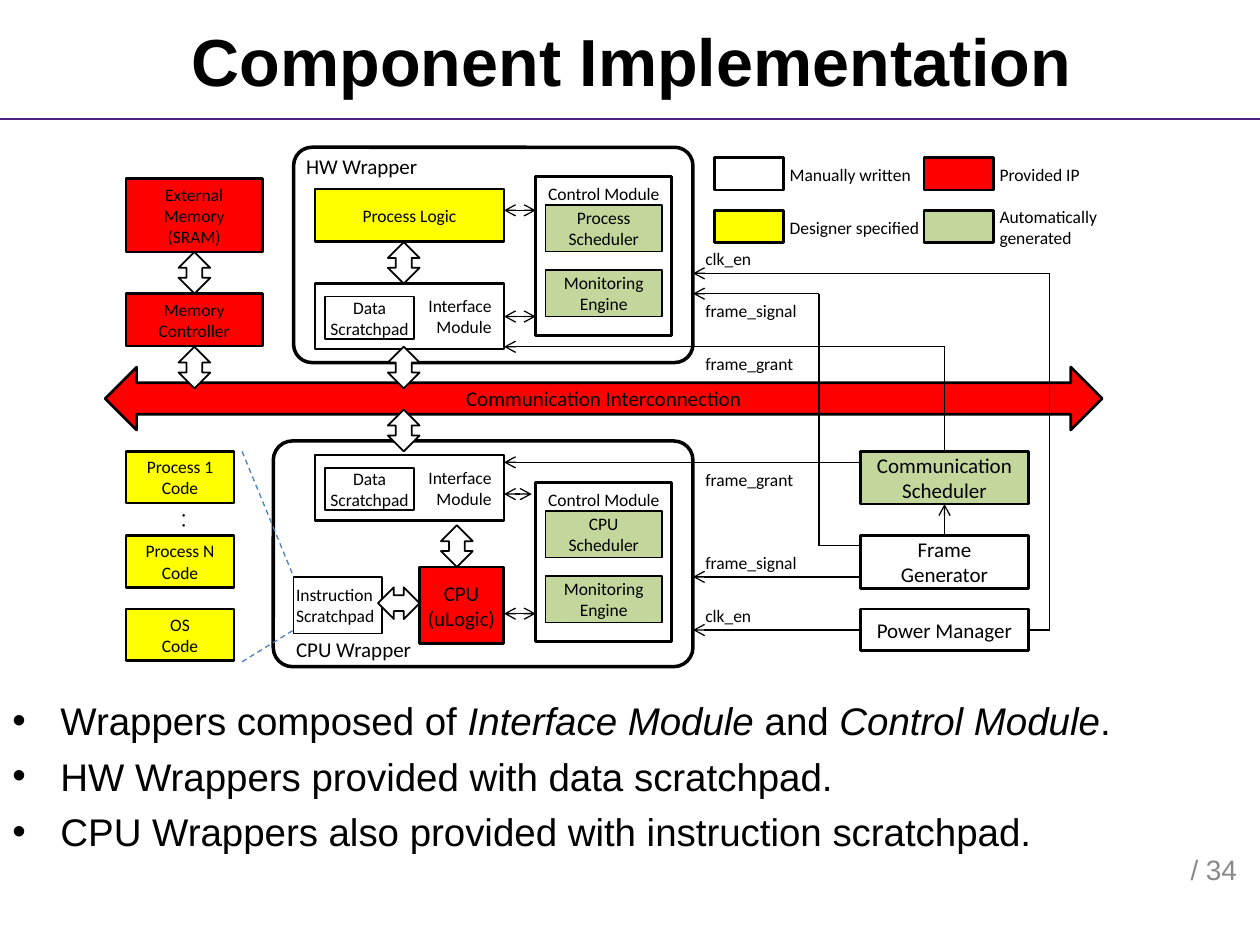
from lxml import etree
from pptx import Presentation
from pptx.dml.color import RGBColor
from pptx.enum.dml import MSO_LINE
from pptx.enum.shapes import MSO_CONNECTOR, MSO_SHAPE
from pptx.enum.text import MSO_ANCHOR, PP_ALIGN
from pptx.oxml.ns import qn
from pptx.util import Cm, Pt

RECT, ROUNDED = MSO_SHAPE.RECTANGLE, MSO_SHAPE.ROUNDED_RECTANGLE
UP_DOWN, LEFT_RIGHT = MSO_SHAPE.UP_DOWN_ARROW, MSO_SHAPE.LEFT_RIGHT_ARROW
LEFT, CENTER, RIGHT = PP_ALIGN.LEFT, PP_ALIGN.CENTER, PP_ALIGN.RIGHT
TOP, MIDDLE, BOTTOM = MSO_ANCHOR.TOP, MSO_ANCHOR.MIDDLE, MSO_ANCHOR.BOTTOM
SIDE_TOP, SIDE_LEFT, SIDE_BOTTOM, SIDE_RIGHT = range(4)
STRAIGHT, DASH = MSO_CONNECTOR.STRAIGHT, MSO_LINE.DASH

COLORS = {
    "ink": "000000", "manual": "FFFFFF", "provided": "FF0000",
    "designer": "FFFF00", "generated": "C3D69B",
    "rule": "4A2384", "dashed": "4B7EBC", "footer": "898989",
}
SMALL, MEDIUM = 10, 12


def rgb(name):
    return RGBColor.from_string(COLORS[name])


def write(frame, text, size, align=LEFT, anchor=TOP, font="Calibri",
          color="ink", bold=False, insets=(0.25, 0.13, 0.25, 0.13)):
    frame.text = text
    frame.word_wrap = True
    frame.vertical_anchor = anchor
    (frame.margin_left, frame.margin_top,
     frame.margin_right, frame.margin_bottom) = map(Cm, insets)
    for paragraph in frame.paragraphs:
        paragraph.alignment = align
        paragraph.font.size = Pt(size)
        paragraph.font.name = font
        paragraph.font.bold = bold
        paragraph.font.color.rgb = rgb(color)


def block(slide, left, top, width, height, fill="manual", text="",
          size=SMALL, align=CENTER, anchor=MIDDLE, weight=1.5, kind=RECT, **style):
    shape = slide.shapes.add_shape(kind, Cm(left), Cm(top), Cm(width), Cm(height))
    shape.shadow.inherit = False
    shape.fill.solid()
    shape.fill.fore_color.rgb = rgb(fill)
    shape.line.color.rgb = rgb("ink")
    shape.line.width = Pt(weight)
    if text:
        write(shape.text_frame, text, size, align, anchor, **style)
    return shape


def label(slide, left, top, width, height, text, size=SMALL, **style):
    box = slide.shapes.add_textbox(Cm(left), Cm(top), Cm(width), Cm(height))
    write(box.text_frame, text, size, **style)
    return box


def wire(slide, x1, y1, x2, y2, heads="", color="ink", weight=0.75,
         dash=None, begin=None, end=None):
    """heads names the arrow ends; begin and end are (shape, side) pairs."""
    line = slide.shapes.add_connector(STRAIGHT, Cm(x1), Cm(y1), Cm(x2), Cm(y2))
    line.line.color.rgb = rgb(color)
    line.line.width = Pt(weight)
    if dash:
        line.line.dash_style = dash
    properties = line._element.spPr
    for tag in heads.split():
        etree.SubElement(properties.find(qn("a:ln")), qn(f"a:{tag}"), type="arrow")
    etree.SubElement(properties, qn("a:effectLst"))
    if begin:
        line.begin_connect(*begin)
    if end:
        line.end_connect(*end)


def transfer_arrow(slide, left, top):
    block(slide, left, top, 0.64, 0.84, weight=1, kind=UP_DOWN)


def interface_module(slide, left, top):
    module = block(slide, left, top, 3.81, 1.32, text="Interface\nModule", align=RIGHT)
    block(slide, left + 0.2, top + 0.26, 1.8, 0.86, text="Data\nScratchpad",
          weight=1, insets=(0, 0, 0, 0))
    return module


def control_module(slide, left, top, scheduler):
    block(slide, left, top, 2.74, 3.2, text="Control Module", align=LEFT,
          anchor=TOP, insets=(0.25, 0.13, 0, 0))
    for row, engine in enumerate((scheduler, "Monitoring Engine")):
        block(slide, left + 0.2, top + 0.57 + 1.31 * row, 2.34, 0.94,
              "generated", engine, weight=1)


def wrapper_frame(slide, left, top, width, height):
    frame = block(slide, left, top, width, height, weight=2, kind=ROUNDED)
    frame.adjustments[0] = 0.085


def hw_wrapper(slide, left, top, width, height):
    wrapper_frame(slide, left, top, width, height)
    label(slide, left, top, 2.9, 0.76, "HW Wrapper", MEDIUM)
    block(slide, left + 0.43, top + 0.84, 3.81, 1.06, "designer", "Process Logic")
    control_module(slide, left + 4.88, top + 0.59, "Process Scheduler")
    interface = interface_module(slide, left + 0.43, top + 2.75)
    transfer_arrow(slide, left + 1.9, top + 1.91)
    for y, joint in ((1.27, None), (3.41, (interface, SIDE_RIGHT))):
        wire(slide, left + 4.24, top + y, left + 4.88, top + y,
             "headEnd tailEnd", begin=joint)


def cpu_wrapper(slide, left, top, width, height):
    wrapper_frame(slide, left, top, width, height)
    label(slide, left + 0.21, top + 3.81, 3, 0.76, "CPU Wrapper", MEDIUM)
    block(slide, left + 2.95, top + 2.54, 1.69, 1.55, "provided", "CPU\n(uLogic)",
          MEDIUM, insets=(0, 0, 0, 0))
    block(slide, left + 0.41, top + 2.74, 1.78, 1.14, text="Instruction\nScratchpad",
          align=LEFT, weight=1, insets=(0.05, 0, 0, 0))
    control_module(slide, left + 5.29, top + 0.84, "CPU Scheduler")
    interface_module(slide, left + 0.84, top + 0.28)
    transfer_arrow(slide, left + 3.38, top + 1.7)
    block(slide, left + 2.11, top + 2.95, 0.84, 0.64, weight=1, kind=LEFT_RIGHT)
    for y, x_end in ((1.07, 5.21), (3.48, 5.29)):
        wire(slide, left + 4.65, top + y, left + x_end, top + y, "headEnd tailEnd")


def external_memory(slide, left, top, width):
    block(slide, left, top, width, 1.48, "provided", "External Memory (SRAM)")
    block(slide, left, top + 2.32, width, 1.06, "provided", "Memory Controller")
    transfer_arrow(slide, left + 1.06, top + 1.48)


def software(slide, left, top, width):
    for y, code in ((0, "Process 1"), (1.7, "Process N"), (3.18, "OS")):
        block(slide, left, top + y, width, 1.04, "designer", f"{code}\nCode")
    dots = label(slide, left + 0.38, top + 1.02, 1.27, 0.76, ". .", MEDIUM, align=CENTER)
    dots.rotation = 270
    # Code is loaded into the instruction scratchpad
    for y1, y2 in ((0, 2.53), (4.24, 3.6)):
        wire(slide, left + 2.34, top + y1, left + 3.38, top + y2,
             color="dashed", dash=DASH)


def interconnection(slide, left, top, width, height):
    block(slide, left, top, width, height, "provided", "Communication Interconnection",
          MEDIUM, kind=LEFT_RIGHT)
    for x, y in ((1.48, -0.41), (5.7, -0.41), (5.7, 0.86)):
        transfer_arrow(slide, left + x, top + y)


def legend(slide, left, top):
    entries = (("manual", "Manually written"), ("provided", "Provided IP"),
               ("designer", "Designer specified"), ("generated", "Automatically\ngenerated"))
    for index, (fill, meaning) in enumerate(entries):
        row, column = divmod(index, 2)
        x, y = left + 4.23 * column, top + 1.06 * row
        block(slide, x, y, 1.4, 0.65, fill)
        label(slide, x + 1.27, y, 3.2, 0.69, meaning, anchor=MIDDLE)


def control_units(slide, left, top, width):
    unit_x, unit_width = left + 3.38, 3.38
    middle, interface_x = unit_x + unit_width / 2, left - 3.81
    scheduler = block(slide, unit_x, top + 4.22, unit_width, 1.06, "generated",
                      "Communication\nScheduler", MEDIUM)
    generator = block(slide, unit_x, top + 5.92, unit_width, 1.06,
                      text="Frame Generator", size=MEDIUM)
    power = block(slide, unit_x, top + 7.4, unit_width, 0.84,
                  text="Power Manager", size=MEDIUM)
    # Signals ending at the wrappers: start x, end x, y, joined start
    for x1, x2, y, joint in (
            (left + width, left, 0.63, None), (left + 2.54, left, 1.04, None),
            (middle, interface_x, 2.11, None), (unit_x, interface_x, 4.44, None),
            (unit_x, left, 6.75, None), (unit_x, left, 7.82, (power, SIDE_LEFT))):
        wire(slide, x1, top + y, x2, top + y, "tailEnd", begin=joint)
    # Risers feeding the upper signals
    wire(slide, unit_x + unit_width, top + 7.82, left + width, top + 7.82,
         begin=(power, SIDE_RIGHT))
    wire(slide, left + width, top + 7.82, left + width, top + 0.63)
    wire(slide, unit_x, top + 6.12, left + 2.54, top + 6.12)
    wire(slide, left + 2.54, top + 6.12, left + 2.54, top + 1.04)
    wire(slide, middle, top + 4.22, middle, top + 2.11, begin=(scheduler, SIDE_TOP))
    wire(slide, middle, top + 5.92, middle, top + 5.28, "tailEnd",
         begin=(generator, SIDE_TOP), end=(scheduler, SIDE_BOTTOM))
    for y, signal in ((0, "clk_en"), (1.04, "frame_signal"), (2.11, "frame_grant"),
                      (4.44, "frame_grant"), (6.12, "frame_signal"), (7.18, "clk_en")):
        label(slide, left, top + y, 2.5, 0.69, signal)


def heading(slide, left, top, width, height):
    label(slide, left + 0.84, top, 23.8, height, "Component Implementation", 38,
          align=CENTER, anchor=MIDDLE, font="Arial", bold=True)
    wire(slide, left, top + height, left + width, top + height, color="rule", weight=1)


def takeaways(slide, left, top, width, height):
    points = ("Wrappers composed of |Interface Module |and |Control Module|.",
              "HW Wrappers provided with data scratchpad.",
              "CPU Wrappers also provided with instruction scratchpad.")
    frame = label(slide, left, top, width, height, "", 22).text_frame
    for index, point in enumerate(points):
        paragraph = frame.add_paragraph() if index else frame.paragraphs[0]
        if index:
            paragraph.space_before = Pt(5.4)
        properties = paragraph._p.get_or_add_pPr()
        properties.set("marL", str(Cm(0.97)))
        properties.set("indent", str(Cm(-0.97)))
        etree.SubElement(properties, qn("a:buFont"), typeface="Arial")
        etree.SubElement(properties, qn("a:buChar"), char="•")
        # Every second piece is a term in italics
        for piece, words in enumerate(point.split("|")):
            run = paragraph.add_run()
            run.text = words
            run.font.size = Pt(22)
            run.font.name = "Arial"
            run.font.italic = piece % 2 == 1
            run.font.color.rgb = rgb("ink")


def main():
    deck = Presentation()
    deck.slide_width, deck.slide_height = Cm(25.4), Cm(19.05)
    slide = deck.slides.add_slide(deck.slide_layouts[6])
    heading(slide, 0, 0, 25.4, 2.4)
    cpu_wrapper(slide, 5.51, 8.89, 8.46, 4.55)
    hw_wrapper(slide, 5.92, 2.97, 8.05, 4.34)
    external_memory(slide, 2.54, 3.6, 2.75)
    software(slide, 2.54, 9.1, 2.18)
    interconnection(slide, 2.12, 7.4, 20.1, 1.27)
    legend(slide, 14.4, 3.18)
    control_units(slide, 13.97, 4.88, 7.19)
    takeaways(slide, 0, 13.92, 24.97, 3.38)
    label(slide, 23.75, 16.97, 1.65, 1.02, "/ 34", 16, anchor=BOTTOM,
          font="Arial", color="footer")
    deck.save("out.pptx")


if __name__ == "__main__":
    main()
